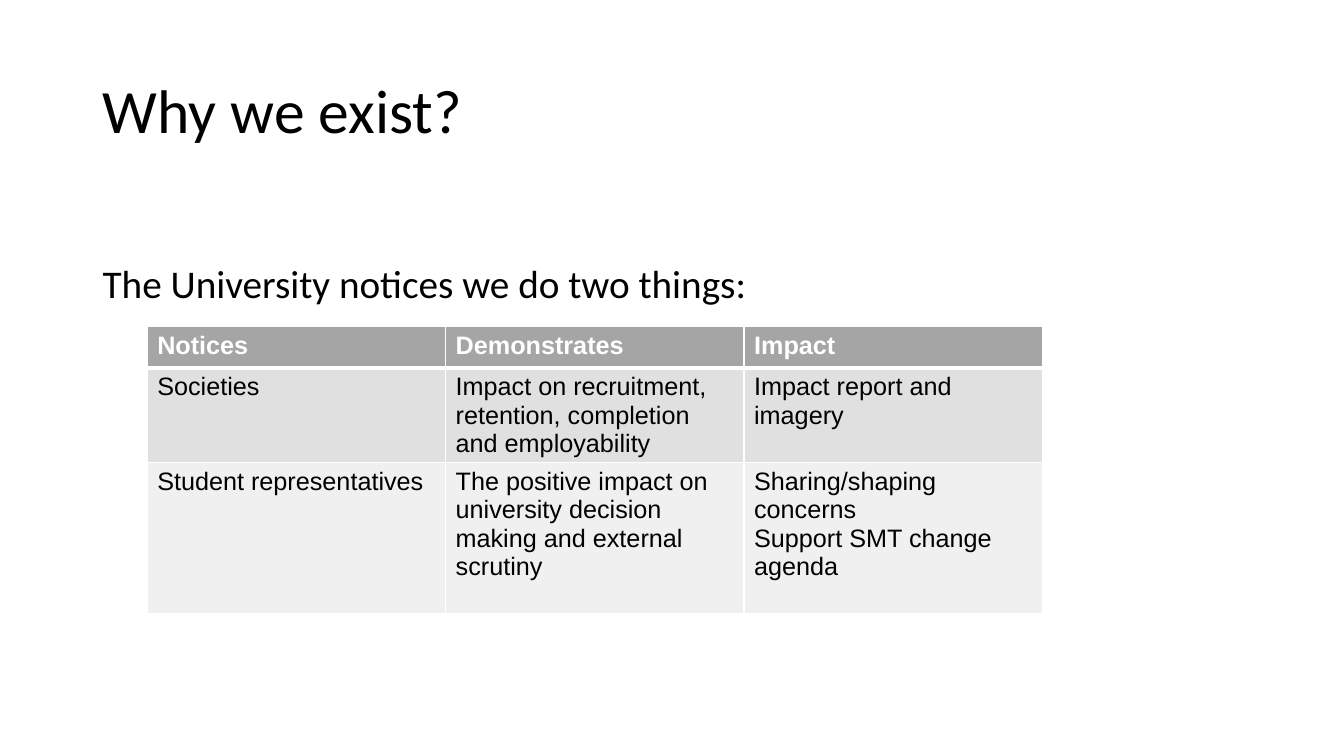
from lxml import etree
from pptx import Presentation
from pptx.dml.color import RGBColor
from pptx.enum.text import MSO_ANCHOR as Anchor, MSO_AUTO_SIZE as AutoSize, PP_ALIGN as Align
from pptx.oxml.ns import qn
from pptx.util import Inches, Pt

BLACK, WHITE = "000000", "FFFFFF"
HEADER_FILL = "A5A5A5"
BAND_FILLS = ["E0E0E0", "F0F0F0"]
ROW_HEIGHTS = [0.41, 0.93, 1.5]
NOTICES = [
    ["Notices", "Demonstrates", "Impact"],
    ["Societies",
     "Impact on recruitment, retention, completion and employability",
     "Impact report and imagery"],
    ["Student representatives",
     "The positive impact on university decision making and external scrutiny",
     "Sharing/shaping concerns\nSupport SMT change agenda"],
]


def color(hex_code):
    return RGBColor.from_string(hex_code)


def style(paragraph, font_name, size, hex_code, bold=False):
    font = paragraph.font
    font.name, font.size, font.bold = font_name, Pt(size), bold
    font.color.rgb = color(hex_code)


def write_line(frame, text, size, anchor):
    """Put one left-aligned line of Calibri text in a frame."""
    frame.text = text
    frame.word_wrap = True
    frame.auto_size = AutoSize.NONE
    frame.vertical_anchor = anchor
    line = frame.paragraphs[0]
    line.alignment = Align.LEFT
    line.line_spacing = 0.9
    style(line, "Calibri", size, BLACK)


def add_border(cell, side, width):
    properties = cell._tc.get_or_add_tcPr()
    border = etree.SubElement(properties, qn(f"a:{side}"), w=str(Pt(width)))
    fill = etree.SubElement(border, qn("a:solidFill"))
    etree.SubElement(fill, qn("a:srgbClr"), val=WHITE)


def place_title(slide, left, top, width, height):
    title = slide.shapes.title
    title.left, title.top = Inches(left), Inches(top)
    title.width, title.height = Inches(width), Inches(height)
    write_line(title.text_frame, "Why we exist?", 44, Anchor.MIDDLE)


def place_lead_in(slide, left, top, width, height):
    lead_in = slide.shapes.add_textbox(
        Inches(left), Inches(top), Inches(width), Inches(height))
    write_line(lead_in.text_frame, "The University notices we do two things:",
               28, Anchor.TOP)


def place_notices(slide, left, top, width):
    notices = slide.shapes.add_table(
        len(NOTICES), len(NOTICES[0]), Inches(left), Inches(top),
        Inches(width), Inches(sum(ROW_HEIGHTS))).table
    for row, height in zip(notices.rows, ROW_HEIGHTS):
        row.height = Inches(height)
    for r, entries in enumerate(NOTICES):
        is_header = r == 0
        # The rule under the header is heavier than the other borders
        top_rule = 3 if r == 1 else 1
        bottom_rule = 3 if is_header else 1
        for c, entry in enumerate(entries):
            cell = notices.cell(r, c)
            cell.text = entry
            for paragraph in cell.text_frame.paragraphs:
                style(paragraph, "Arial", 18,
                      WHITE if is_header else BLACK, is_header)
            for side, rule in (("lnL", 1), ("lnR", 1),
                               ("lnT", top_rule), ("lnB", bottom_rule)):
                add_border(cell, side, rule)
            cell.fill.solid()
            cell.fill.fore_color.rgb = color(
                HEADER_FILL if is_header else BAND_FILLS[r - 1])


def main():
    deck = Presentation()
    deck.slide_width, deck.slide_height = Inches(13.33), Inches(7.5)
    slide = deck.slides.add_slide(deck.slide_layouts.get_by_name("Title Only"))
    place_title(slide, 0.92, 0.4, 11.5, 1.45)
    place_lead_in(slide, 0.92, 2.58, 11.5, 0.6)
    place_notices(slide, 1.46, 3.24, 8.88)
    deck.save("out.pptx")


if __name__ == "__main__":
    main()
